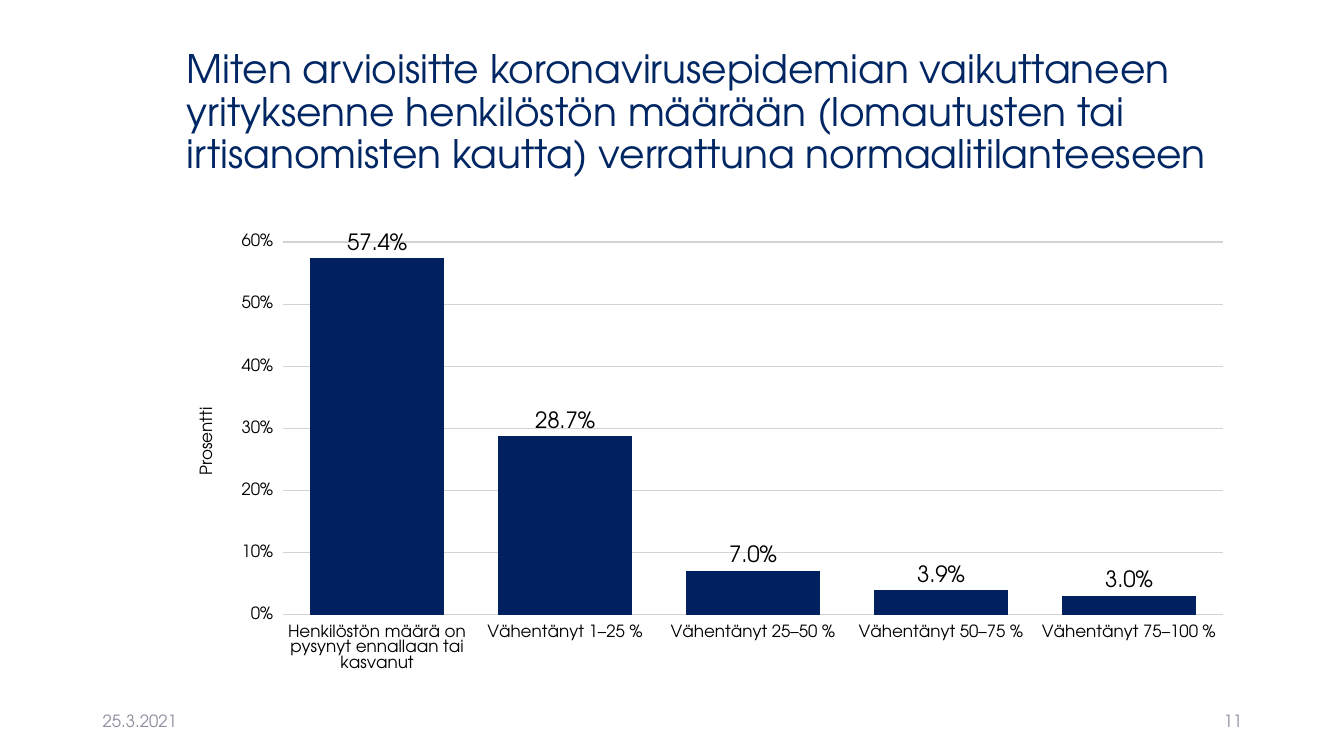
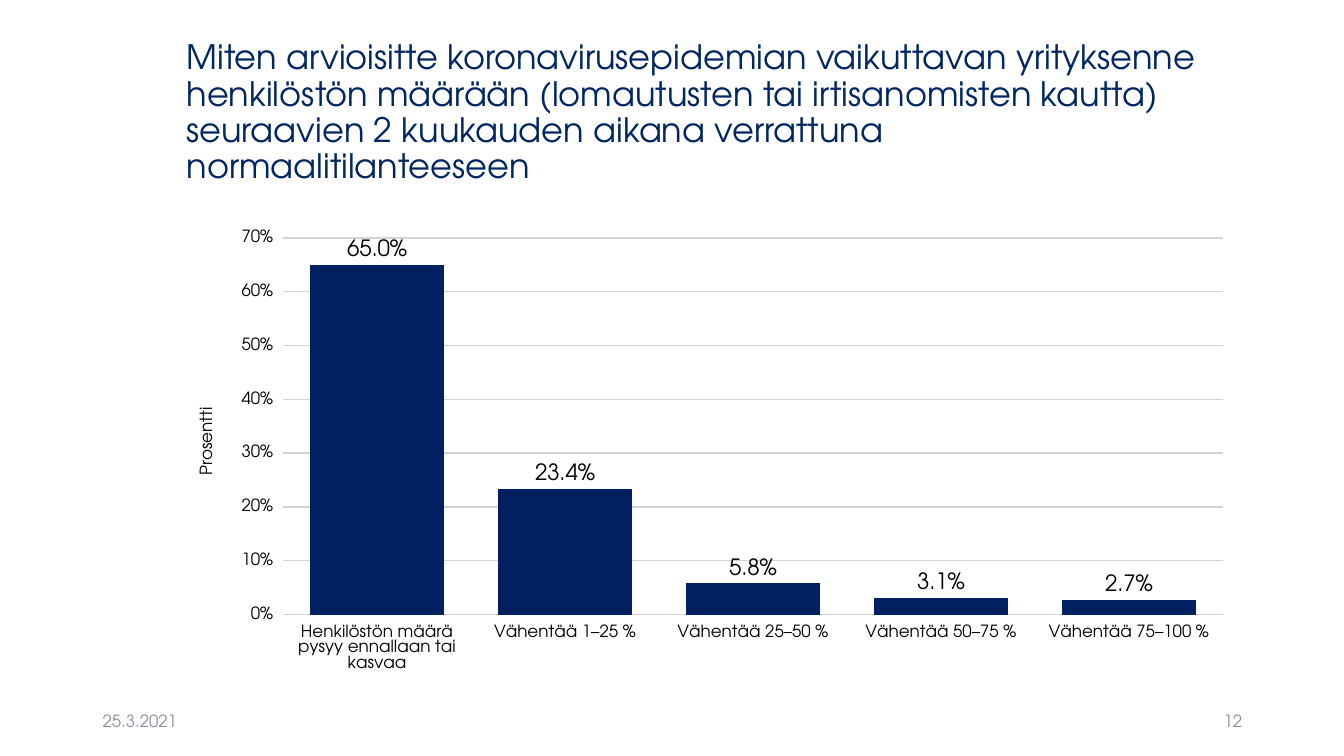
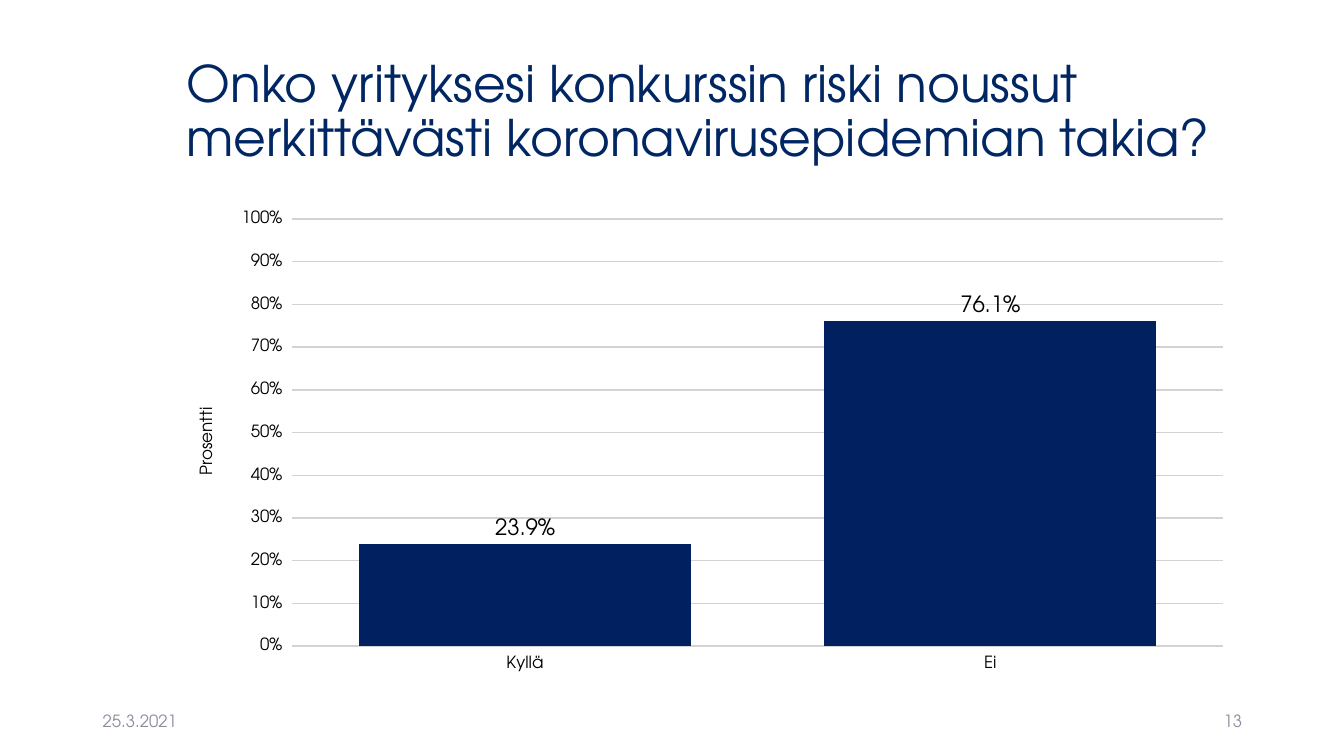
import pptx
import pptx.chart.data
import pptx.dml.color
import pptx.enum.chart
import pptx.enum.text
import pptx.util

PX = 9144
FONT = "TeX Gyre Adventor"
COLORS = {"title": "002663", "bar": "002060", "text": "000000",
          "footer": "8C8E9F", "grid": "D3D3D3"}
DATE = "25.3.2021"
FIRST_NUMBER = 11

SURVEY = [
    ("Miten arvioisitte koronavirusepidemian vaikuttaneen yrityksenne henkilöstön määrään "
     "(lomautusten tai irtisanomisten kautta) verrattuna normaalitilanteeseen", 28, 0.65,
     {"Henkilöstön määrä on pysynyt ennallaan tai kasvanut": 0.574,
      "Vähentänyt 1–25 %": 0.287,
      "Vähentänyt 25–50 %": 0.07,
      "Vähentänyt 50–75 %": 0.039,
      "Vähentänyt 75–100 %": 0.03}),
    ("Miten arvioisitte koronavirusepidemian vaikuttavan yrityksenne henkilöstön määrään "
     "(lomautusten tai irtisanomisten kautta) seuraavien 2 kuukauden aikana verrattuna "
     "normaalitilanteeseen", 24, 0.75,
     {"Henkilöstön määrä pysyy ennallaan tai kasvaa": 0.65,
      "Vähentää 1–25 %": 0.234,
      "Vähentää 25–50 %": 0.058,
      "Vähentää 50–75 %": 0.031,
      "Vähentää 75–100 %": 0.027}),
    ("Onko yrityksesi konkurssin riski noussut merkittävästi koronavirusepidemian takia?",
     36, 1, {"Kyllä": 0.239, "Ei": 0.761}),
]


def rgb(name):
    return pptx.dml.color.RGBColor.from_string(COLORS[name])


def px(*lengths):
    return [pptx.util.Emu(n * PX) for n in lengths]


class Deck:
    """Holds the shared style and the slide being built."""

    def __init__(self):
        self.prs = pptx.Presentation()
        self.prs.slide_width, self.prs.slide_height = px(1333, 750)
        self.s = None

    def add_slide(self):
        self.s = self.prs.slides.add_slide(self.prs.slide_layouts[5])

    def style(self, font, size, color="text"):
        font.name = FONT
        font.size = pptx.util.Pt(size)
        font.bold = False
        font.color.rgb = rgb(color)

    def set_text(self, sp, text, size, color, align):
        tf = sp.text_frame
        tf.text = text
        tf.word_wrap = True
        tf.auto_size = pptx.enum.text.MSO_AUTO_SIZE.NONE
        tf.vertical_anchor = pptx.enum.text.MSO_ANCHOR.MIDDLE
        p = tf.paragraphs[0]
        p.alignment = align
        self.style(p.runs[0].font, size, color)
        return p

    def title(self, text, size):
        sp = self.s.shapes.title
        sp.left, sp.top, sp.width, sp.height = px(175, 40, 1059, 145)
        p = self.set_text(sp, text, size, "title", pptx.enum.text.PP_ALIGN.LEFT)
        p.line_spacing = 0.9

    def footer(self, number):
        align = pptx.enum.text.PP_ALIGN
        for left, text, side in ((92, DATE, align.LEFT), (942, str(number), align.RIGHT)):
            sp = self.s.shapes.add_textbox(*px(left, 695, 300, 40))
            self.set_text(sp, text, 12, "footer", side)

    def chart(self, answers, top_value):
        data = pptx.chart.data.CategoryChartData(number_format="0.0%")
        data.categories = list(answers)
        data.add_series("Series 1", list(answers.values()))
        kind = pptx.enum.chart.XL_CHART_TYPE.COLUMN_CLUSTERED
        chart = self.s.shapes.add_chart(kind, *px(175, 200, 1059, 476), data).chart
        chart.has_title = chart.has_legend = False
        self.style(chart.font, 11)
        self.columns(chart.plots[0])
        self.axes(chart, top_value)

    def columns(self, plot):
        plot.gap_width = 40
        plot.vary_by_categories = False
        fill = plot.series[0].format.fill
        fill.solid()
        fill.fore_color.rgb = rgb("bar")
        plot.has_data_labels = True
        labels = plot.data_labels
        labels.show_value = True
        labels.position = pptx.enum.chart.XL_LABEL_POSITION.OUTSIDE_END
        labels.number_format = "0.0%"
        labels.number_format_is_linked = False
        self.style(labels.font, 16)

    def axes(self, chart, top_value):
        for axis in (chart.category_axis, chart.value_axis):
            axis.format.line.fill.background()
            self.style(axis.tick_labels.font, 12)
        axis = chart.value_axis
        axis.minimum_scale, axis.maximum_scale, axis.major_unit = 0, top_value, 0.1
        axis.tick_labels.number_format = "0%"
        axis.tick_labels.number_format_is_linked = False
        axis.has_major_gridlines = True
        grid = axis.major_gridlines.format.line
        grid.color.rgb = rgb("grid")
        grid.width = pptx.util.Pt(1)
        tf = axis.axis_title.text_frame
        tf.text = "Prosentti"
        self.style(tf.paragraphs[0].runs[0].font, 12)


def main():
    deck = Deck()
    for number, (question, size, top_value, answers) in enumerate(SURVEY, FIRST_NUMBER):
        deck.add_slide()
        deck.title(question, size)
        deck.footer(number)
        deck.chart(answers, top_value)
    deck.prs.save("out.pptx")


if __name__ == "__main__":
    main()
